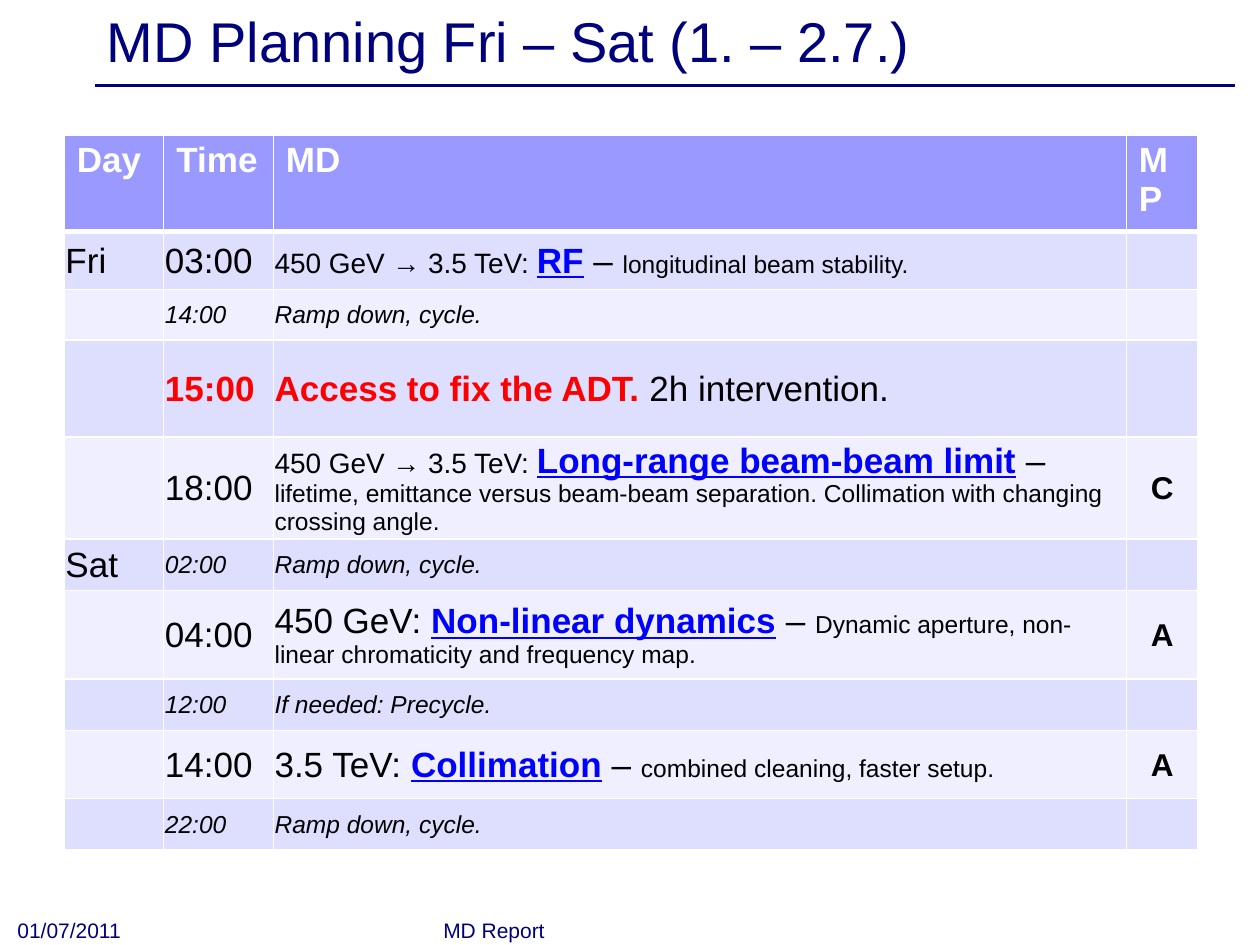
from lxml import etree
from pptx import Presentation
from pptx.dml.color import RGBColor
from pptx.enum.shapes import MSO_CONNECTOR
from pptx.enum.text import MSO_ANCHOR, PP_ALIGN
from pptx.oxml.ns import qn
from pptx.util import Inches, Pt

MIDDLE, BOTTOM = MSO_ANCHOR.MIDDLE, MSO_ANCHOR.BOTTOM
LEFT, CENTER = PP_ALIGN.LEFT, PP_ALIGN.CENTER
STRAIGHT = MSO_CONNECTOR.STRAIGHT

FONT = "Arial"
COLORS = {
    "navy": "00007D", "white": "FFFFFF", "black": "000000", "blue": "0000FF",
    "red": "FF0000", "header": "9999FF", "odd": "DEDEFF", "even": "EFEFFF",
}

# Run formats used in the schedule
STYLES = {
    "head": dict(size=20, color="white", bold=True),
    "main": dict(size=20),
    "energy": dict(size=16),
    "detail": dict(size=14),
    "idle": dict(size=14, italic=True),
    "topic": dict(size=20, color="blue", bold=True, underline=True),
    "alert": dict(size=20, color="red", bold=True),
    "class": dict(size=18, bold=True),
}

# Content: day, time, activity, machine protection class
TITLE = "MD Planning Fri – Sat (1. – 2.7.)"
HEADERS = ["Day", "Time", "MD", "MP"]
RAMP = "450 GeV → 3.5 TeV: "
SCHEDULE = [
    ("Fri", ("03:00", "main"),
     [(RAMP, "energy"), ("RF", "topic"), (" – ", "main"),
      ("longitudinal beam stability.", "detail")], ""),
    ("", ("14:00", "idle"), [("Ramp down, cycle.", "idle")], ""),
    ("", ("15:00", "alert"),
     [("Access to fix the ADT. ", "alert"), ("2h intervention.", "main")], ""),
    ("", ("18:00", "main"),
     [(RAMP, "energy"), ("Long-range beam-beam limit", "topic"), (" – ", "main"),
      ("lifetime, emittance versus beam-beam separation. "
       "Collimation with changing crossing angle.", "detail")], "C"),
    ("Sat", ("02:00", "idle"), [("Ramp down, cycle.", "idle")], ""),
    ("", ("04:00", "main"),
     [("450 GeV: ", "main"), ("Non-linear dynamics", "topic"), (" – ", "main"),
      ("Dynamic aperture, non-linear chromaticity and frequency map.", "detail")], "A"),
    ("", ("12:00", "idle"), [("If needed: Precycle.", "idle")], ""),
    ("", ("14:00", "main"),
     [("3.5 TeV: ", "main"), ("Collimation", "topic"), (" – ", "main"),
      ("combined cleaning, faster setup.", "detail")], "A"),
    ("", ("22:00", "idle"), [("Ramp down, cycle.", "idle")], ""),
]
COL_WIDTHS = [0.79, 0.87, 6.77, 0.57]
ROW_HEIGHTS = [0.71, 0.46, 0.4, 0.77, 0.77, 0.41, 0.7, 0.41, 0.54, 0.41]


def rgb(name):
    return RGBColor.from_string(COLORS[name])


def add_run(p, text, size=20, color="black", bold=False, italic=False, underline=False):
    r = p.add_run()
    r.text = text
    f = r.font
    f.name, f.size = FONT, Pt(size)
    f.bold, f.italic, f.underline = bold, italic, underline
    f.color.rgb = rgb(color)


def add_text(slide, text, box, anchor, **fmt):
    tf = slide.shapes.add_textbox(*map(Inches, box)).text_frame
    tf.word_wrap = True
    tf.vertical_anchor = anchor
    add_run(tf.paragraphs[0], text, color="navy", **fmt)


def set_borders(cell, bottom=1):
    tc_pr = cell._tc.get_or_add_tcPr()
    for side, width in (("L", 1), ("R", 1), ("T", 1), ("B", bottom)):
        ln = etree.SubElement(tc_pr, qn(f"a:ln{side}"), w=str(Pt(width)))
        fill = etree.SubElement(ln, qn("a:solidFill"))
        etree.SubElement(fill, qn("a:srgbClr"), val=COLORS["white"])


def paint(cell, color, bottom=1):
    set_borders(cell, bottom)
    cell.fill.solid()
    cell.fill.fore_color.rgb = rgb(color)


def fill_cell(cell, runs, align=LEFT):
    cell.vertical_anchor = MIDDLE
    cell.margin_left = cell.margin_right = cell.margin_top = Inches(0.01)
    cell.margin_bottom = 0
    p = cell.text_frame.paragraphs[0]
    p.alignment = align
    for text, style in runs:
        add_run(p, text, **STYLES[style])


def add_schedule(slide):
    table = slide.shapes.add_table(
        len(ROW_HEIGHTS), len(COL_WIDTHS), Inches(0.51), Inches(1.07),
        Inches(sum(COL_WIDTHS)), Inches(sum(ROW_HEIGHTS))).table
    for col, width in zip(table.columns, COL_WIDTHS):
        col.width = Inches(width)
    for row, height in zip(table.rows, ROW_HEIGHTS):
        row.height = Inches(height)

    for c, text in enumerate(HEADERS):
        cell = table.cell(0, c)
        paint(cell, "header", bottom=3)
        add_run(cell.text_frame.paragraphs[0], text, **STYLES["head"])

    for i, (day, time, activity, mp) in enumerate(SCHEDULE, start=1):
        row = [[(day, "main")] if day else [], [time], activity,
               [(mp, "class")] if mp else []]
        for c, runs in enumerate(row):
            cell = table.cell(i, c)
            paint(cell, "odd" if i % 2 else "even")
            if runs:
                fill_cell(cell, runs, CENTER if c == 3 else LEFT)


def main():
    prs = Presentation()
    prs.slide_width, prs.slide_height = Inches(10), Inches(7.5)
    slide = prs.slides.add_slide(prs.slide_layouts[6])

    # Title and rule
    rule = slide.shapes.add_connector(
        STRAIGHT, Inches(0.75), Inches(0.68), Inches(9.8), Inches(0.68))
    rule.line.color.rgb = rgb("navy")
    rule.line.width = Pt(2)
    etree.SubElement(rule._element.spPr, qn("a:effectLst"))
    add_text(slide, TITLE, (0.75, 0.03, 9, 0.57), MIDDLE, size=32)

    add_schedule(slide)

    # Footer
    add_text(slide, "MD Report", (3.42, 7.25, 3.17, 0.28), BOTTOM, size=12)
    add_text(slide, "01/07/2011", (0.04, 7.24, 2.33, 0.29), BOTTOM, size=12)

    prs.save("out.pptx")


if __name__ == "__main__":
    main()
